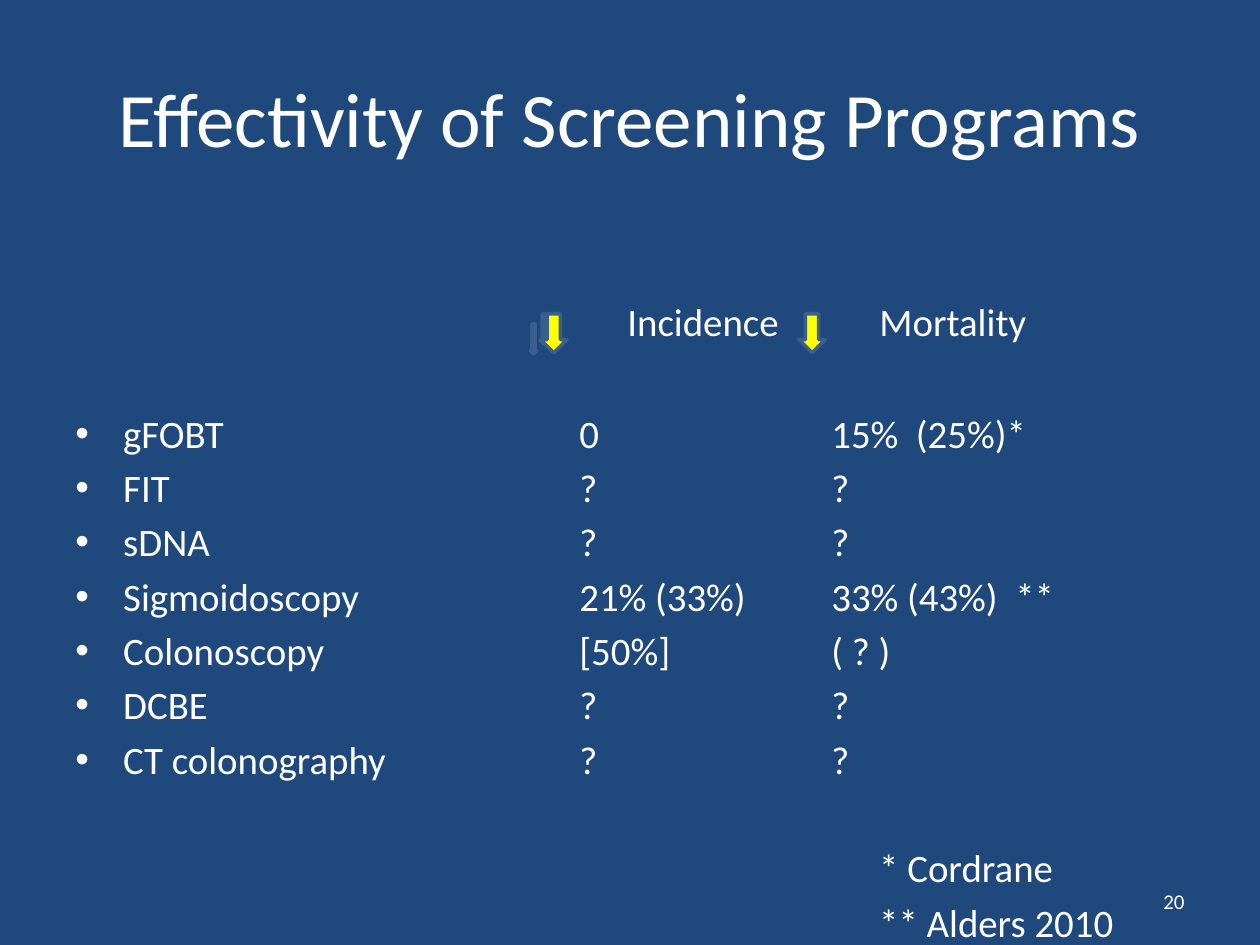
import pptx
import pptx.dml.color
import pptx.enum.shapes
import pptx.enum.text
import pptx.util
import lxml.etree

Inches, Pt = pptx.util.Inches, pptx.util.Pt
ALIGN, ANCHOR = pptx.enum.text.PP_ALIGN, pptx.enum.text.MSO_ANCHOR
WHITE = "FFFFFF"
BODY_SIZE = 22.2
BODY_LEFT = 0.6
INDENT = 0.38
COLUMNS = (4, 6)


def color(hex_value):
    return pptx.dml.color.RGBColor.from_string(hex_value)


def style(paragraph, size):
    for run in paragraph.runs:
        run.font.name = "Calibri"
        run.font.size = Pt(size)
        run.font.color.rgb = color(WHITE)


deck = pptx.Presentation()
deck.slide_width, deck.slide_height = Inches(10), Inches(7.5)
slide = deck.slides.add_slide(deck.slide_layouts[5])
slide.background.fill.solid()
slide.background.fill.fore_color.rgb = color("1F497D")

# Title
title = slide.shapes.title
title.left, title.top = Inches(0.5), Inches(0.3)
title.width, title.height = Inches(9), Inches(1.25)
title.text_frame.text = "Effectivity of Screening Programs"
title.text_frame.vertical_anchor = ANCHOR.MIDDLE
title.text_frame.paragraphs[0].alignment = ALIGN.CENTER
style(title.text_frame.paragraphs[0], 44)

# Screening results and footnotes: text, space before in points, bulleted
results = [
    ("\tgFOBT\t0\t15%  (25%)*", 0, True),
    ("\tFIT\t?\t?", 4.4, True),
    ("\tsDNA\t?\t?", 4.4, True),
    ("\tSigmoidoscopy\t21% (33%)\t33% (43%)  **", 4.4, True),
    ("\tColonoscopy\t[50%]\t( ? )", 4.4, True),
    ("\tDCBE\t?\t?", 4.4, True),
    ("\tCT colonography\t?\t?", 4.4, True),
    ("* Cordrane", 35.5, False),
    ("** Alders 2010", 4.4, False),
]
body = slide.shapes.add_textbox(Inches(0.5), Inches(1.75), Inches(9), Inches(4.95)).text_frame
body.word_wrap = True
body.margin_top = Inches(1.5)
for number, (text, gap, bulleted) in enumerate(results):
    line = body.paragraphs[0] if number == 0 else body.add_paragraph()
    line.text = text
    line.space_before = Pt(gap)
    style(line, BODY_SIZE)
    properties = line._p.get_or_add_pPr()
    namespace = "{" + properties.nsmap["a"] + "}"
    properties.set("marL", "0" if bulleted else str(Inches(COLUMNS[1] + INDENT)))
    properties.set("indent", "0")
    if bulleted:
        lxml.etree.SubElement(properties, namespace + "buFont", typeface="Arial")
        lxml.etree.SubElement(properties, namespace + "buChar", char="•")
        tabs = lxml.etree.SubElement(properties, namespace + "tabLst")
        for stop in (INDENT, *COLUMNS):
            lxml.etree.SubElement(tabs, namespace + "tab", pos=str(Inches(stop)), algn="l")

# Column headings, one indent further in than their columns
for column, measure in zip(COLUMNS, ("Incidence", "Mortality")):
    heading = slide.shapes.add_textbox(
        Inches(BODY_LEFT + column + INDENT), Inches(2.36), Inches(1.5), Inches(0.38)).text_frame
    heading.word_wrap = True
    heading.margin_left = heading.margin_right = 0
    heading.margin_top = heading.margin_bottom = 0
    heading.text = measure
    heading.paragraphs[0].alignment = ALIGN.LEFT
    style(heading.paragraphs[0], BODY_SIZE)

# Down arrows beside the column headings
for left, top, width, height, fill in [
    (4.29, 2.49, 0.05, 0.24, "4F81BD"),
    (4.21, 2.57, 0.05, 0.24, "4F81BD"),
    (4.29, 2.49, 0.21, 0.31, "FFFF00"),
    (6.34, 2.49, 0.21, 0.31, "FFFF00"),
]:
    decrease = slide.shapes.add_shape(
        pptx.enum.shapes.MSO_SHAPE.DOWN_ARROW,
        Inches(left), Inches(top), Inches(width), Inches(height))
    decrease.shadow.inherit = False
    decrease.fill.solid()
    decrease.fill.fore_color.rgb = color(fill)
    decrease.line.color.rgb = color("3A5F8C")
    decrease.line.width = Pt(2)

# Page number
page = slide.shapes.add_textbox(Inches(7.17), Inches(6.95), Inches(2.33), Inches(0.4)).text_frame
page.word_wrap = True
page.vertical_anchor = ANCHOR.MIDDLE
page.text = "20"
page.paragraphs[0].alignment = ALIGN.RIGHT
style(page.paragraphs[0], 12)

deck.save("out.pptx")
